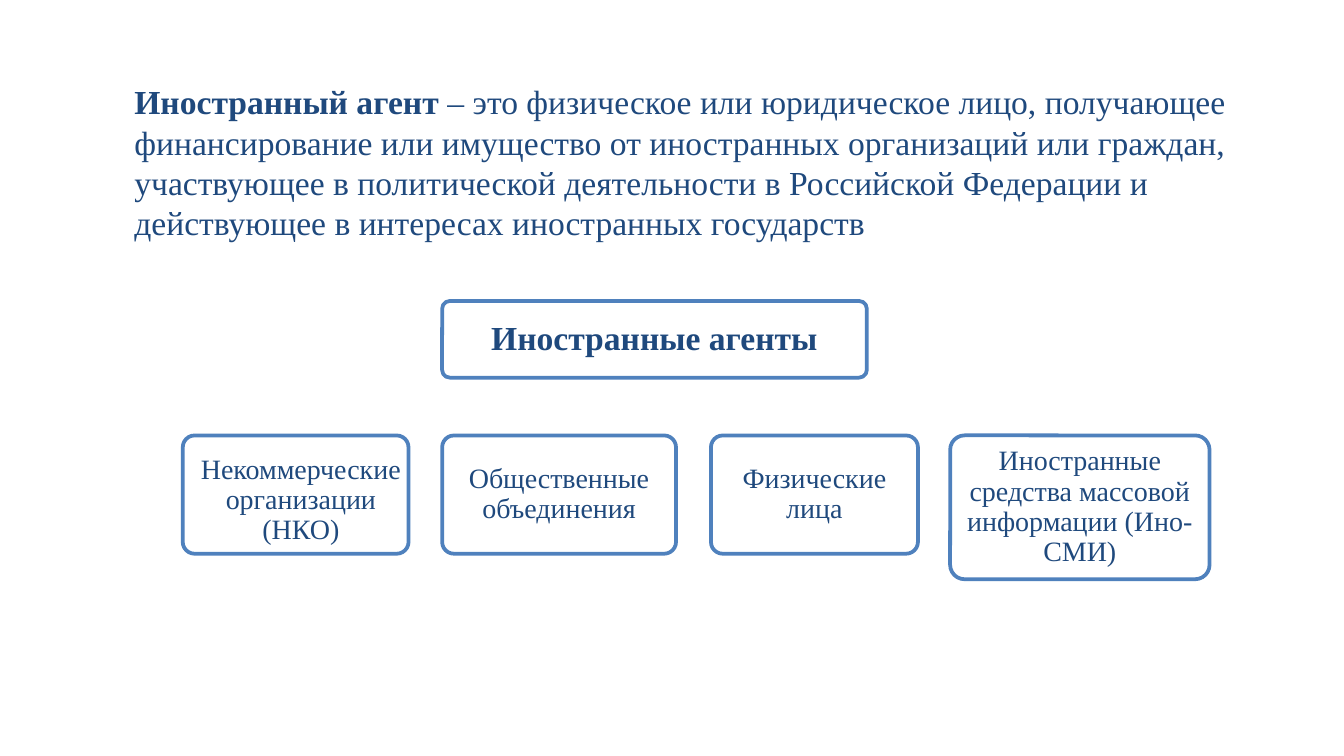
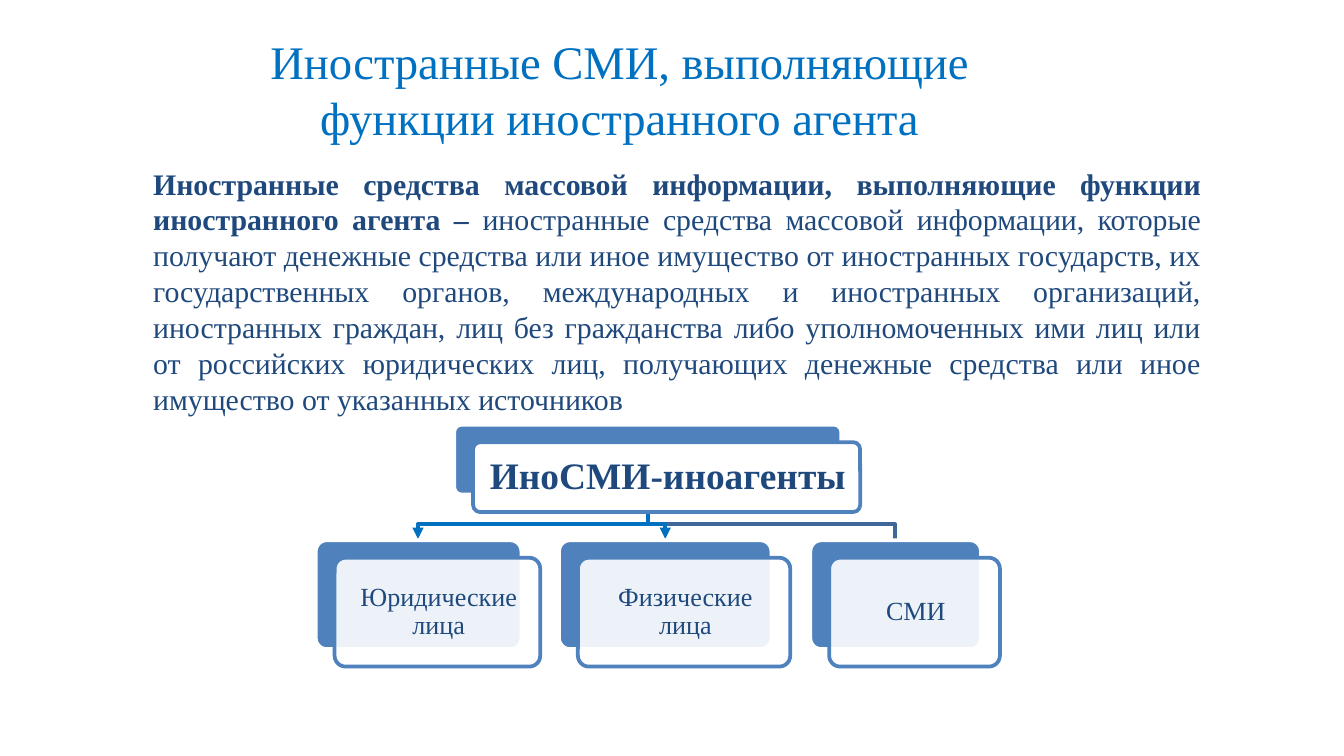
import pptx
import pptx.util
import pptx.dml.color
import pptx.enum.shapes
import pptx.enum.text
import pptx.oxml
import pptx.oxml.ns
from lxml import etree

Inches = pptx.util.Inches
Pt = pptx.util.Pt
RGBColor = pptx.dml.color.RGBColor
ALIGN = pptx.enum.text.PP_ALIGN
ANCHOR = pptx.enum.text.MSO_ANCHOR

# Shared look
FONT = "Times New Roman"
NAVY = RGBColor(0x1F, 0x49, 0x7D)
STEEL = RGBColor(0x4F, 0x81, 0xBD)
DUSK = RGBColor(0x3F, 0x67, 0x97)
BLUE = RGBColor(0x00, 0x70, 0xC0)
WHITE = RGBColor(0xFF, 0xFF, 0xFF)
LINE_WIDTH = Pt(2)
TITLE_ONLY = 5


def add_xml(parent, tag, **attributes):
    child = etree.SubElement(parent, pptx.oxml.ns.qn(tag))
    for name, value in attributes.items():
        child.set(name, value)


def write_text(box, text, lead="", size=18, color=NAVY, bold=False,
               align=ALIGN.LEFT, anchor=ANCHOR.MIDDLE,
               insets=(0, 0, 0, 0), spacing=None):
    """Fill a shape with one paragraph, opened by an optional bold lead."""
    frame = box.text_frame
    frame.word_wrap = True
    frame.auto_size = pptx.enum.text.MSO_AUTO_SIZE.NONE
    frame.vertical_anchor = anchor
    (frame.margin_left, frame.margin_top,
     frame.margin_right, frame.margin_bottom) = map(Inches, insets)
    para = frame.paragraphs[0]
    para.alignment = align
    if spacing:
        para.line_spacing = spacing
    for words, heavy in ((lead, True), (text, bold)):
        if words:
            span = para.add_run()
            span.text = words
            span.font.name = FONT
            span.font.size = Pt(size)
            span.font.bold = heavy
            span.font.color.rgb = color


def add_title(page, left, top, width, height, text, **text_format):
    title = page.shapes.title
    title.left, title.top = Inches(left), Inches(top)
    title.width, title.height = Inches(width), Inches(height)
    write_text(title, text, **text_format)


def add_box(page, left, top, width, height, fill=WHITE, line=STEEL, opacity=100):
    box = page.shapes.add_shape(
        pptx.enum.shapes.MSO_SHAPE.ROUNDED_RECTANGLE,
        Inches(left), Inches(top), Inches(width), Inches(height))
    box.adjustments[0] = 0.1
    box.shadow.inherit = False
    box.fill.solid()
    box.fill.fore_color.rgb = fill
    box.line.color.rgb = line
    box.line.width = LINE_WIDTH
    if opacity < 100:
        solid = box.fill._xPr.find(pptx.oxml.ns.qn("a:solidFill"))
        add_xml(solid[0], "a:alpha", val=str(opacity * 1000))
    return box


def add_label_box(page, left, top, width, height, text, opacity=90, **text_format):
    box = add_box(page, left, top, width, height, opacity=opacity)
    write_text(box, text, align=ALIGN.CENTER, spacing=0.9, **text_format)


def add_card(page, left, top, width, height, text, opacity=90, **text_format):
    """A labelled box in front of a solid plate."""
    add_box(page, left, top, width, height, fill=STEEL, line=WHITE)
    add_label_box(page, left + 0.14, top + 0.13, width, height, text,
                  opacity=opacity, **text_format)


def add_branch(page, start_x, end_x, color, arrow):
    top, bend, bottom = 3.68, 3.9, 4.01
    points = [(Inches(x), Inches(y)) for x, y in
              ((start_x, bend), (end_x, bend), (end_x, bottom))]
    builder = page.shapes.build_freeform(Inches(start_x), Inches(top), scale=1.0)
    builder.add_line_segments(points, close=False)
    branch = builder.convert_to_shape()
    branch.shadow.inherit = False
    branch.fill.background()
    branch.line.color.rgb = color
    branch.line.width = LINE_WIDTH
    if arrow:
        add_xml(branch.line._get_or_add_ln(), "a:tailEnd", type="triangle")


def build_definition(deck):
    page = deck.slides.add_slide(deck.slide_layouts[TITLE_ONLY])
    add_title(page, 1, 0.46, 8.21, 1.49,
              "– это физическое или юридическое лицо, получающее финансирование "
              "или имущество от иностранных организаций или граждан, участвующее "
              "в политической деятельности в Российской Федерации и действующее "
              "в интересах иностранных государств",
              lead="Иностранный агент ")
    add_label_box(page, 3.29, 2.24, 3.16, 0.57, "Иностранные агенты",
                  opacity=100, bold=True, insets=(0.08,) * 4)

    # Kinds of agents
    even = (0.06,) * 4
    kinds = [
        (1.36, 1.68, 0.88, "Некоммерческие организации (НКО)", (0.1, 0.1, 0.02, 0.01)),
        (3.29, 1.74, 0.88, "Общественные объединения", even),
        (5.29, 1.54, 0.88, "Физические лица", even),
        (7.07, 1.93, 1.07, "Иностранные средства массовой информации (Ино-СМИ)", even),
    ]
    for left, width, height, text, insets in kinds:
        add_label_box(page, left, 3.24, width, height, text, size=15, insets=insets)


def build_media(deck):
    page = deck.slides.add_slide(deck.slide_layouts[TITLE_ONLY])
    add_title(page, 1.86, 0.31, 5.5, 0.7,
              "Иностранные СМИ, выполняющие функции иностранного агента",
              size=25, color=BLUE, align=ALIGN.CENTER)
    body = page.shapes.add_textbox(Inches(1.07), Inches(1.2), Inches(7.94), Inches(2.34))
    write_text(body,
               "иностранные средства массовой информации, которые получают денежные "
               "средства или иное имущество от иностранных государств, их "
               "государственных органов, международных и иностранных организаций, "
               "иностранных граждан, лиц без гражданства либо уполномоченных ими лиц "
               "или от российских юридических лиц, получающих денежные средства или "
               "иное имущество от указанных источников",
               lead="Иностранные средства массовой информации, выполняющие функции "
                    "иностранного агента – ",
               size=16, align=ALIGN.JUSTIFY, anchor=ANCHOR.TOP,
               insets=(0.07, 0.03, 0.07, 0.03))

    # Branches lie behind the cards
    for end_x, color, arrow in ((6.66, DUSK, False), (4.95, BLUE, True), (3.11, BLUE, True)):
        add_branch(page, 4.82, end_x, color, arrow)

    # Tree of cards
    add_card(page, 3.38, 3.16, 2.88, 0.52, "ИноСМИ-иноагенты", opacity=100,
             size=20, bold=True, insets=(0.1, 0.1, 0.08, 0.1))
    for left, width, text in ((2.35, 1.53, "Юридические лица"),
                              (4.16, 1.58, "Физические лица"),
                              (6.03, 1.27, "СМИ")):
        add_card(page, left, 4.02, width, 0.81, text, size=14,
                 insets=(0.08, 0.08, 0.06, 0.08))


def main():
    deck = pptx.Presentation()
    deck.slide_width = Inches(10)
    deck.slide_height = deck.slide_width * 9 // 16
    build_definition(deck)
    build_media(deck)
    deck.save("out.pptx")


if __name__ == "__main__":
    main()
